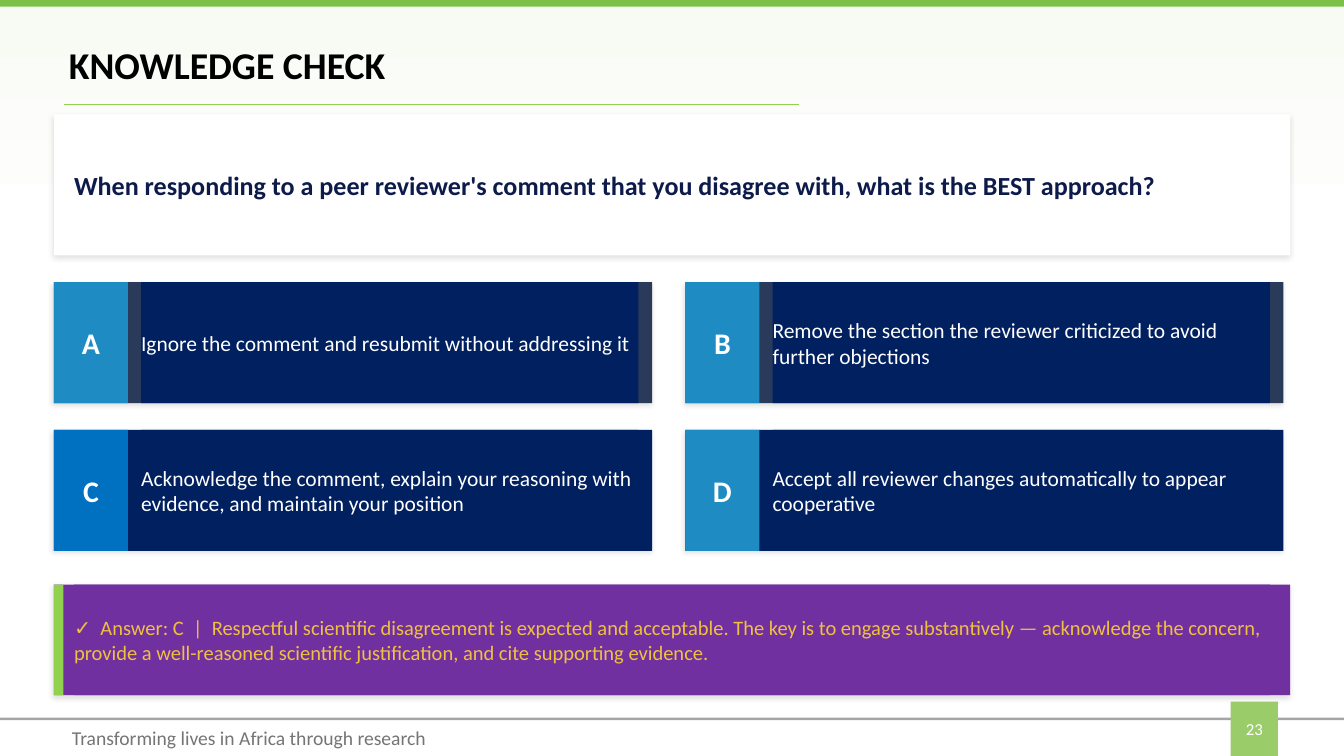
from lxml import etree
from pptx import Presentation
from pptx.dml.color import RGBColor as RGB
from pptx.enum.shapes import MSO_CONNECTOR as Line, MSO_SHAPE as Shape
from pptx.enum.text import MSO_ANCHOR as Anchor, PP_ALIGN as Align
from pptx.oxml import parse_xml
from pptx.oxml.ns import nsdecls, qn
from pptx.util import Inches, Pt

HUES = {
    "white": "FFFFFF", "black": "000000", "tint": "F8FBF4", "rule": "A6A4A9",
    "band": "7BC148", "lime": "92D050", "leaf": "9ACD69", "gray": "757575",
    "ink": "0D1B4B", "slate": "2A3A5A", "navy": "002060", "sky": "1E8BC3",
    "blue": "0070C0", "plum": "7030A0", "gold": "F0C040",
}
WIDE, HIGH = 26.67, 15
LEFT, FULL = 1.07, 24.53
PAD = 0.4

# Letter, answer text, card colour, tag colour
CHOICES = [
    ("A", "Ignore the comment and resubmit without addressing it", "slate", "sky"),
    ("B", "Remove the section the reviewer criticized to avoid further objections",
     "slate", "sky"),
    ("C", "Acknowledge the comment, explain your reasoning with evidence, "
          "and maintain your position", "navy", "blue"),
    ("D", "Accept all reviewer changes automatically to appear cooperative",
     "navy", "sky"),
]


def hue(name):
    return RGB.from_string(HUES[name])


def add_box(slide, box, fill):
    shape = slide.shapes.add_shape(Shape.RECTANGLE, *map(Inches, box))
    shape.shadow.inherit = False
    shape.line.fill.background()
    shape.fill.solid()
    shape.fill.fore_color.rgb = hue(fill)
    return shape


def add_card(slide, box, fill):
    """A box with a soft shadow."""
    card = add_box(slide, box, fill)
    glow = card.element.spPr.find(qn("a:effectLst"))
    glow.append(parse_xml(
        f'<a:outerShdw {nsdecls("a")} blurRad="{Pt(8)}" dist="{Pt(3)}" '
        f'dir="{135 * 60000}" algn="bl" rotWithShape="0">'
        f'<a:srgbClr val="{HUES["black"]}"><a:alpha val="12000"/></a:srgbClr>'
        '</a:outerShdw>'))
    return card


def write(shape, text, size, color, bold=False, align=Align.LEFT, inset=(0, 0)):
    frame = shape.text_frame
    frame.word_wrap = True
    frame.vertical_anchor = Anchor.MIDDLE
    frame.margin_left = frame.margin_right = Inches(inset[0])
    frame.margin_top = frame.margin_bottom = Inches(inset[1])
    para = frame.paragraphs[0]
    para.alignment = align
    run = para.add_run()
    run.text = text
    run.font.name = "Calibri"
    run.font.size = Pt(size)
    run.font.bold = bold
    run.font.color.rgb = hue(color)
    return para


def add_text(slide, box, *args, **kwargs):
    shape = slide.shapes.add_textbox(*map(Inches, box))
    return write(shape, *args, **kwargs)


def add_frame(slide, box):
    """Tinted backdrop, top band and footer rule."""
    x, y, w, h = box
    fill = add_box(slide, box, "white").fill
    fill.gradient()
    fill.gradient_angle = 270
    for stop, place, name in zip(fill.gradient_stops, (0.02, 0.3), ("tint", "white")):
        stop.position = place
        stop.color.rgb = hue(name)
    add_box(slide, (x, y + h - 0.76, w, 0.05), "rule")
    add_box(slide, (x, y, w, 0.13), "band")


def add_foot(slide, box):
    x, y, w, h = box
    add_text(slide, (x + 1.33, y + 0.32, 9, 0.8),
             "Transforming lives in Africa through research", 28, "gray",
             inset=(0.1, 0.05))
    page = add_box(slide, (x + 24.42, y, 0.94, h), "leaf")
    write(page, "23", 24, "white", align=Align.CENTER, inset=(0.1, 0.05))


def add_title(slide, box):
    x, y, w, h = box
    para = add_text(slide, box, "KNOWLEDGE CHECK", 54, "black", bold=True,
                    inset=(0.1, 0.05))
    para.line_spacing = 0.9
    rule = slide.shapes.add_connector(
        Line.STRAIGHT, *map(Inches, (x, y + 1.24, x + 14.58, y + 1.24)))
    rule.line.color.rgb = hue("lime")
    rule.line.width = Pt(1)
    etree.SubElement(rule.element.spPr, qn("a:effectLst"))


def add_query(slide, box):
    x, y, w, h = box
    add_card(slide, box, "white")
    add_text(slide, (x + PAD, y, w - 2 * PAD, h),
             "When responding to a peer reviewer's comment that you disagree with, "
             "what is the BEST approach?", 37.3, "ink", bold=True)


def add_choice(slide, box, letter, text, fill, tag):
    x, y, w, h = box
    add_card(slide, box, fill)
    write(add_box(slide, (x, y, 1.47, h), tag), letter, 42.7, "white",
          bold=True, align=Align.CENTER)
    panel = add_box(slide, (x + 1.73, y, w - 2, h), "navy")
    write(panel, text, 30.7, "white")


def add_grid(slide, box):
    """Choices in two rows of two."""
    x, y, w, h = box
    wide, high = 11.87, 2.4
    for i, choice in enumerate(CHOICES):
        row, col = divmod(i, 2)
        spot = (x + col * (w - wide), y + row * (h - high), wide, high)
        add_choice(slide, spot, *choice)


def add_answer(slide, box):
    x, y, w, h = box
    add_card(slide, box, "plum")
    add_box(slide, (x, y, 0.19, h), "lime")
    panel = add_box(slide, (x + PAD, y, w - 2 * PAD, h), "plum")
    write(panel, "✓  Answer: C  |  Respectful scientific disagreement is expected "
          "and acceptable. The key is to engage substantively — acknowledge the "
          "concern, provide a well-reasoned scientific justification, and cite "
          "supporting evidence.", 29.3, "gold")


def main():
    deck = Presentation()
    deck.slide_width, deck.slide_height = Inches(WIDE), Inches(HIGH)
    slide = deck.slides.add_slide(deck.slide_layouts[6])
    add_frame(slide, (0, 0, WIDE, HIGH))
    add_foot(slide, (0, 13.92, WIDE, 1.08))
    add_title(slide, (1.27, 0.83, 24.22, 1.02))
    add_query(slide, (LEFT, 2.27, FULL, 2.8))
    add_grid(slide, (LEFT, 5.6, 24.4, 5.33))
    add_answer(slide, (LEFT, 11.6, FULL, 2.19))
    deck.save("out.pptx")


if __name__ == "__main__":
    main()
